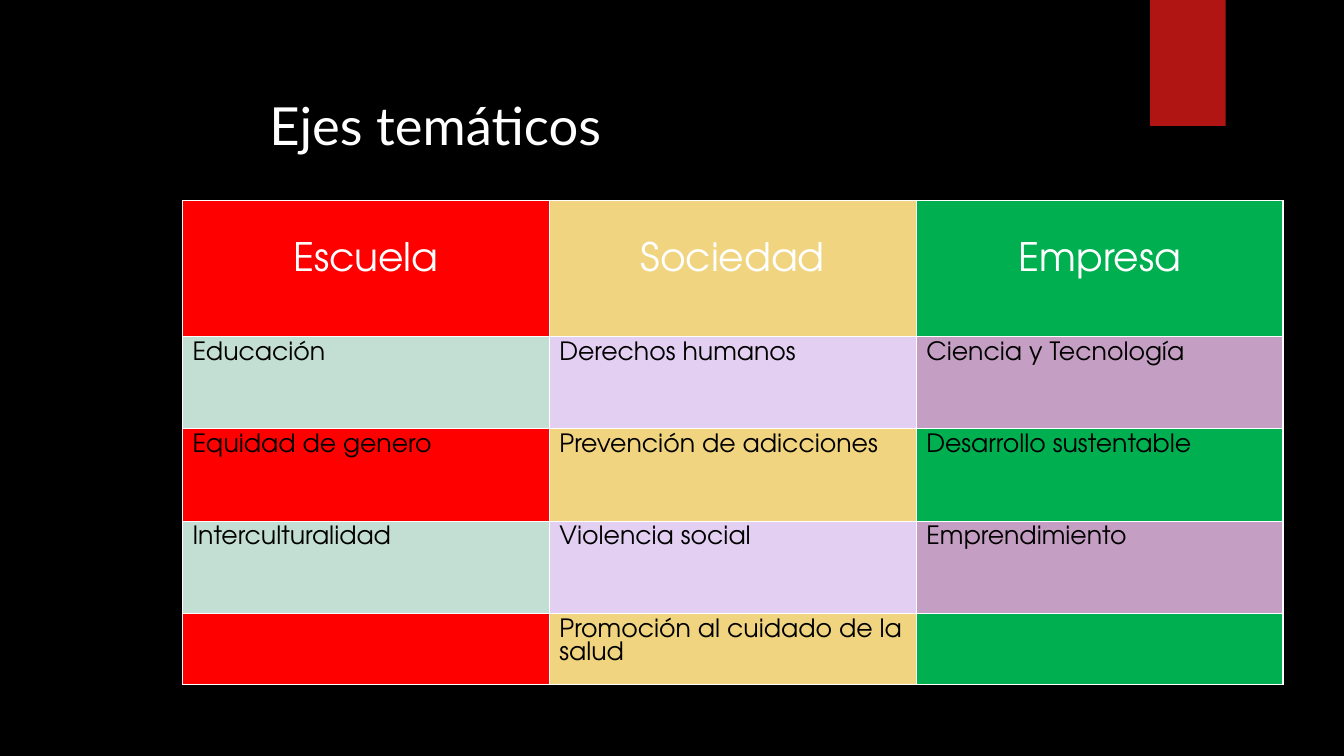
from dataclasses import dataclass
from lxml.etree import SubElement
from pptx import Presentation
from pptx.dml.color import RGBColor
from pptx.enum.shapes import MSO_SHAPE
from pptx.enum.text import MSO_ANCHOR, PP_ALIGN
from pptx.oxml.ns import qn
from pptx.util import Pt


@dataclass(frozen=True)
class Theme:
    back: str = "000000"
    ink: str = "000000"
    light: str = "FFFFFF"
    accent: str = "B01513"
    strong: tuple = ("FF0000", "F0D47F", "00B050")
    soft: tuple = ("C3DED3", "E2CFF1", "C59EC3")
    title: float = 37.5
    head: float = 28
    body: float = 18
    sans: str = "Lato"
    round: str = "TeX Gyre Adventor"


class Deck:
    def __init__(self, theme):
        self.theme = theme
        self.show = Presentation()
        self.show.slide_width, self.show.slide_height = Pt(960), Pt(540)
        self.slide = self.show.slides.add_slide(self.show.slide_layouts[6])
        self.paint(self.slide.background.fill, theme.back)

    def paint(self, fill, color):
        fill.solid()
        fill.fore_color.rgb = RGBColor.from_string(color)

    def label(self, frame, text, color, font, **form):
        para = frame.paragraphs[0]
        run = para.add_run()
        run.text = text
        run.font.color.rgb = RGBColor.from_string(color)
        for key, value in font.items():
            setattr(run.font, key, value)
        for key, value in form.items():
            setattr(para, key, value)

    def title(self, text, *box):
        frame = self.slide.shapes.add_textbox(*map(Pt, box)).text_frame
        form = {"word_wrap": True, "vertical_anchor": MSO_ANCHOR.BOTTOM}
        for key, value in form.items():
            setattr(frame, key, value)
        font = {"name": self.theme.sans, "size": Pt(self.theme.title)}
        self.label(frame, text, self.theme.light, font,
                   alignment=PP_ALIGN.CENTER, line_spacing=0.7)

    def block(self, *box):
        shape = self.slide.shapes.add_shape(MSO_SHAPE.RECTANGLE, *map(Pt, box))
        shape.shadow.inherit = False
        self.paint(shape.fill, self.theme.accent)
        shape.line.fill.background()

    def border(self, cell):
        props = cell._tc.get_or_add_tcPr()
        for place, side in enumerate(("lnL", "lnR", "lnT", "lnB")):
            line = SubElement(props, qn("a:" + side), w=str(Pt(1)))
            fill = SubElement(line, qn("a:solidFill"))
            SubElement(fill, qn("a:srgbClr"), val=self.theme.light)
            props.insert(place, line)

    def grid(self, rows, highs, *box):
        theme = self.theme
        table = self.slide.shapes.add_table(
            len(rows), len(rows[0]), *map(Pt, box)).table
        for key in ("first_row", "horz_banding"):
            setattr(table, key, False)
        for r, (row, high) in enumerate(zip(rows, highs)):
            table.rows[r].height = Pt(high)
            fills = theme.soft if r % 2 else theme.strong
            for c, text in enumerate(row):
                cell = table.cell(r, c)
                self.paint(cell.fill, fills[c])
                self.border(cell)
                if not text:
                    continue
                font = {"name": theme.round, "size": Pt(theme.body)}
                color, align = theme.ink, PP_ALIGN.LEFT
                if r == 0:
                    font["size"] = Pt(theme.head)
                    color, align = theme.light, PP_ALIGN.CENTER
                    cell.margin_top = Pt(30)
                self.label(cell.text_frame, text, color, font, alignment=align)


def main():
    deck = Deck(Theme())
    deck.block(821.5, 0, 54, 90)
    deck.title("Ejes temáticos", 169.2, 43.2, 283.7, 70.6)
    topics = [
        ("Escuela", "Sociedad", "Empresa"),
        ("Educación", "Derechos humanos", "Ciencia y Tecnología"),
        ("Equidad de genero", "Prevención de adicciones",
         "Desarrollo sustentable"),
        ("Interculturalidad", "Violencia social", "Emprendimiento"),
        ("", "Promoción al cuidado de la salud", ""),
    ]
    highs = [97, 66, 66, 66, 38.2]
    deck.grid(topics, highs, 130.3, 143.3, 786.2, sum(highs))
    deck.show.save("out.pptx")


if __name__ == "__main__":
    main()
